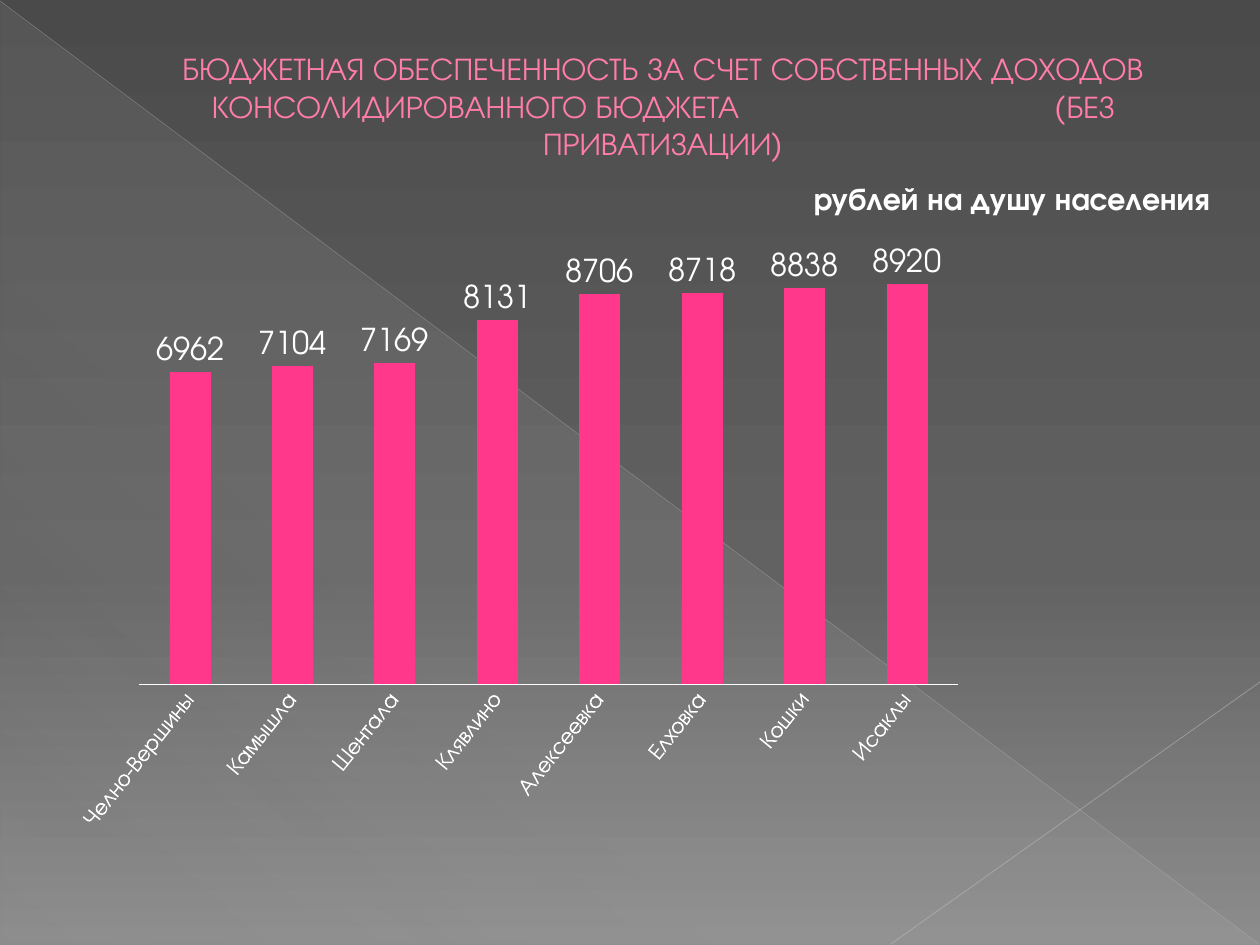
"""Build the slide on budget income per head by district."""
from dataclasses import dataclass

from lxml import etree
from pptx import Presentation
from pptx.chart.data import CategoryChartData
from pptx.dml.color import RGBColor
from pptx.enum import chart as ch, shapes, text
from pptx.oxml import parse_xml
from pptx.oxml.ns import nsdecls, qn
from pptx.util import Pt

EMU_PER_PX = 914400 / 126
FONT = "TeX Gyre Adventor"
WHITE = RGBColor(0xFF, 0xFF, 0xFF)
PINK = RGBColor(0xFF, 0x38, 0x8C)
LIGHT_PINK = RGBColor(0xFF, 0x7D, 0xA7)
HAZE = RGBColor(0xD2, 0xD2, 0xD2)
DARK = RGBColor(0x4A, 0x4A, 0x4A)
MID = RGBColor(0x62, 0x62, 0x62)
PALE = RGBColor(0x8C, 0x8C, 0x8C)

INCOME = {
    "Челно-Вершины": 6962, "Камышла": 7104, "Шентала": 7169, "Клявлино": 8131,
    "Алексеевка": 8706, "Елховка": 8718, "Кошки": 8838, "Исаклы": 8920,
}


@dataclass(frozen=True)
class Stop:
    position: int
    color: RGBColor
    opacity: int = 100


@dataclass(frozen=True)
class Ray:
    start: tuple[int, int]
    end: tuple[int, int]
    color: RGBColor
    width: float
    opacity: int


RAYS = (
    Ray((0, 1), (1259, 944), RGBColor(0xBF, 0xBF, 0xBF), 0.39, 35),
    Ray((1260, 682), (891, 944), RGBColor(0xC6, 0xC6, 0xC6), 0.47, 45),
)


def px(length: int) -> int:
    """Turn pixels into EMU."""
    return round(length * EMU_PER_PX)


def set_opacity(color, percent: int) -> None:
    """Add an alpha value to a colour element."""
    etree.SubElement(color, qn("a:alpha"), val=str(percent * 1000))


def set_gradient(fill, owner, angle: int, stops: tuple[Stop, ...]) -> None:
    """Give a fill a linear gradient with a clockwise angle."""
    fill.gradient()
    fill.gradient_angle = 360 - angle
    stop_list = next(owner.iter(qn("a:gsLst")))
    for old in list(stop_list):
        stop_list.remove(old)
    for stop in stops:
        gs = etree.SubElement(stop_list, qn("a:gs"), pos=str(stop.position * 1000))
        color = etree.SubElement(gs, qn("a:srgbClr"), val=str(stop.color))
        if stop.opacity < 100:
            set_opacity(color, stop.opacity)


def draw_backdrop(slide) -> None:
    """Draw the shaded ground, the triangle and the two rays."""
    set_gradient(slide.background.fill, slide.element, 90,
                 (Stop(0, DARK), Stop(60, MID), Stop(100, PALE)))
    triangle = slide.shapes.add_shape(
        shapes.MSO_SHAPE.RIGHT_TRIANGLE, px(1), px(2), px(1258), px(942))
    triangle.shadow.inherit = False
    triangle.line.fill.background()
    set_gradient(triangle.fill, triangle.element.spPr, 133,
                 (Stop(0, HAZE, 10), Stop(70, HAZE, 8), Stop(100, HAZE, 1)))
    for ray in RAYS:
        draw_ray(slide, ray)


def draw_ray(slide, ray: Ray) -> None:
    """Draw one translucent line."""
    line = slide.shapes.add_connector(
        shapes.MSO_CONNECTOR.STRAIGHT, *map(px, ray.start + ray.end))
    line.line.color.rgb = ray.color
    line.line.width = Pt(ray.width)
    properties = line.element.spPr
    set_opacity(next(properties.iter(qn("a:srgbClr"))), ray.opacity)
    etree.SubElement(properties, qn("a:effectLst"))


def write_title(slide) -> None:
    """Place the heading above the backdrop."""
    title = slide.shapes.title
    slide.shapes.element.append(title.element)
    title.left, title.top, title.width, title.height = map(px, (63, 37, 1134, 137))
    frame = title.text_frame
    frame.text = ("БЮДЖЕТНАЯ ОБЕСПЕЧЕННОСТЬ ЗА СЧЕТ СОБСТВЕННЫХ ДОХОДОВ "
                  "КОНСОЛИДИРОВАННОГО БЮДЖЕТА\t(БЕЗ ПРИВАТИЗАЦИИ)")
    frame.word_wrap = True
    frame.auto_size = text.MSO_AUTO_SIZE.NONE
    frame.vertical_anchor = text.MSO_ANCHOR.MIDDLE
    frame.margin_left = px(79)
    heading = frame.paragraphs[0]
    heading.alignment = text.PP_ALIGN.CENTER
    style_font(heading.font, LIGHT_PINK)
    properties = heading.font._element.getparent()
    properties.insert(0, parse_xml(
        f'<a:tabLst {nsdecls("a")}><a:tab pos="{px(843)}" algn="l"/></a:tabLst>'))


def style_font(font, color: RGBColor, size: int = 18, bold: bool = False) -> None:
    """Apply the slide's typeface."""
    font.name, font.size, font.bold = FONT, Pt(size), bold
    font.color.rgb = color


def chart_layout(**values: float):
    """Return a manual layout for a part of the chart."""
    target = '<c:layoutTarget val="inner"/>' if "w" in values else ""
    modes = "".join(f'<c:{key}Mode val="edge"/>' for key in ("x", "y"))
    sizes = "".join(f'<c:{key} val="{value}"/>' for key, value in values.items())
    return parse_xml(f'<c:layout {nsdecls("c")}><c:manualLayout>'
                     f"{target}{modes}{sizes}</c:manualLayout></c:layout>")


def set_layout(part, layout, index: int) -> None:
    """Replace the layout of a chart part."""
    for old in part.findall(qn("c:layout")):
        part.remove(old)
    part.insert(index, layout)


def draw_chart(slide) -> None:
    """Draw the column chart of income per head."""
    data = CategoryChartData(number_format="General")
    data.categories = list(INCOME)
    data.add_series("Series 1", list(INCOME.values()))
    chart = slide.shapes.add_chart(
        ch.XL_CHART_TYPE.COLUMN_CLUSTERED, *map(px, (35, 155, 1181, 735)), data).chart
    style_font(chart.font, WHITE)
    chart.has_legend = False
    chart.has_title = True
    caption = chart.chart_title.text_frame
    caption.text = "рублей на душу населения"
    style_font(caption.paragraphs[0].font, WHITE, bold=True)
    chart.chart_title.include_in_layout = False
    set_layout(chart.chart_title._element, chart_layout(x=0.67, y=0.03), 1)
    set_layout(next(chart.element.iter(qn("c:plotArea"))),
               chart_layout(x=0.09, y=0.11, w=0.71, h=0.61), 0)

    scale = chart.value_axis
    scale.visible = False
    scale.has_major_gridlines = False
    scale.minimum_scale, scale.maximum_scale = 0, 10000
    districts = chart.category_axis
    districts.major_tick_mark = ch.XL_TICK_MARK.NONE
    districts.format.line.color.rgb = WHITE
    districts.format.line.width = Pt(0.5)
    style_font(districts.tick_labels.font, WHITE, size=13)
    next(districts._element.iter(qn("a:bodyPr"))).set("rot", str(-51 * 60000))

    plot = chart.plots[0]
    plot.gap_width = 150
    plot.vary_by_categories = False
    columns = plot.series[0]
    columns.format.fill.solid()
    columns.format.fill.fore_color.rgb = PINK
    labels = columns.data_labels
    labels.show_value = True
    labels.position = ch.XL_LABEL_POSITION.OUTSIDE_END
    style_font(labels.font, WHITE)


def main() -> None:
    """Assemble and save the presentation."""
    deck = Presentation()
    deck.slide_width, deck.slide_height = px(1260), px(945)
    slide = deck.slides.add_slide(deck.slide_layouts[5])
    draw_backdrop(slide)
    write_title(slide)
    draw_chart(slide)
    deck.save("out.pptx")


if __name__ == "__main__":
    main()
